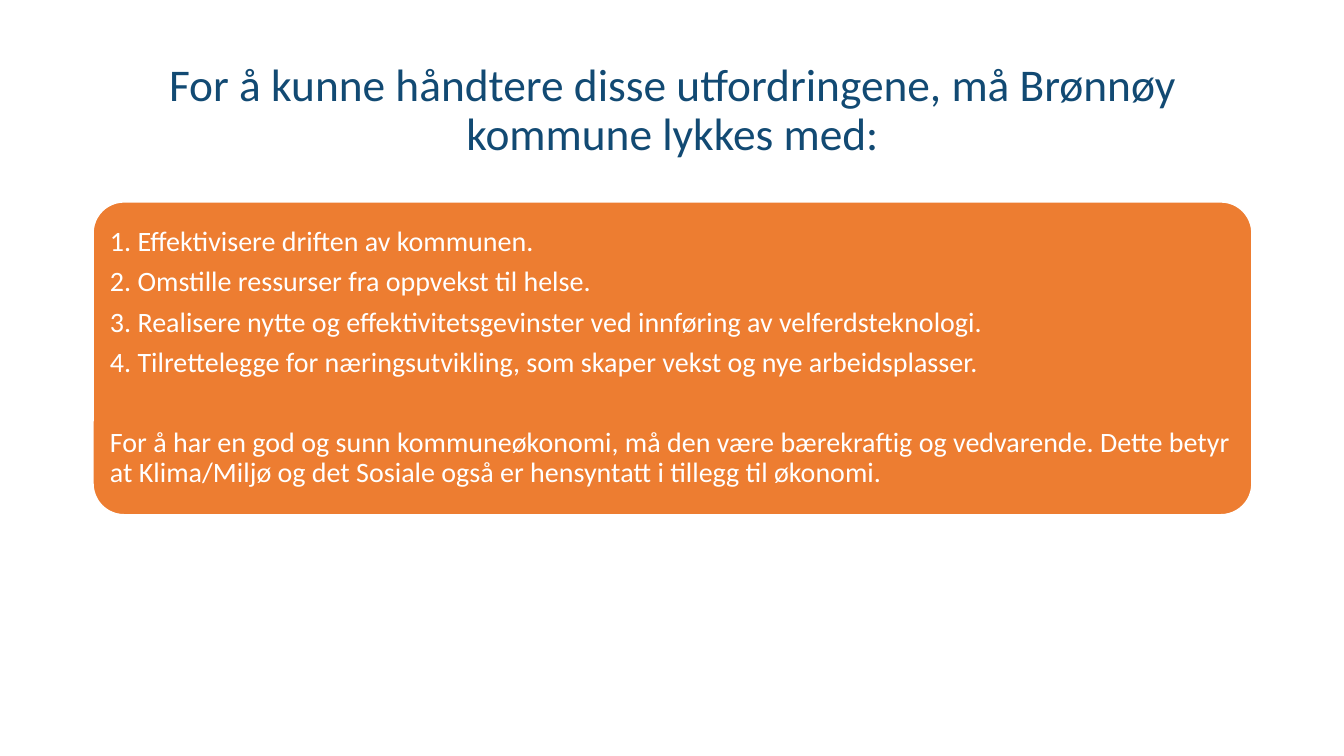
from pptx import Presentation
from pptx.dml.color import RGBColor
from pptx.enum.shapes import MSO_SHAPE
from pptx.enum.text import MSO_ANCHOR, MSO_AUTO_SIZE, PP_ALIGN
from pptx.util import Inches, Pt

ROUNDED = MSO_SHAPE.ROUNDED_RECTANGLE
MIDDLE = MSO_ANCHOR.MIDDLE
LEFT, CENTER = PP_ALIGN.LEFT, PP_ALIGN.CENTER

TITLE = "For å kunne håndtere disse utfordringene, må Brønnøy kommune lykkes med:"
GOALS = [
    "1. Effektivisere driften av kommunen.",
    "2. Omstille ressurser fra oppvekst til helse.",
    "3. Realisere nytte og effektivitetsgevinster ved innføring av velferdsteknologi.",
    "4. Tilrettelegge for næringsutvikling, som skaper vekst og nye arbeidsplasser.",
]
CONCLUSION = (
    "For å har en god og sunn kommuneøkonomi, må den være bærekraftig og vedvarende. "
    "Dette betyr at Klima/Miljø og det Sosiale også er hensyntatt i tillegg til økonomi."
)

THEME = {
    "font": "Calibri",
    "title_size": Pt(32.4),
    "body_size": Pt(20),
    "title": RGBColor(0x12, 0x4A, 0x73),
    "panel": RGBColor(0xED, 0x7D, 0x31),
    "white": RGBColor(0xFF, 0xFF, 0xFF),
}
MARGIN, CONTENT_WIDTH = Inches(0.92), Inches(11.5)
PANEL_INSET = Inches(0.08)
LINE_SPACING = 0.9
GOAL_GAP, CONCLUSION_GAP = Pt(7), Pt(29)


def format_paragraph(paragraph, text, size, color, alignment):
    paragraph.text = text
    paragraph.alignment = alignment
    paragraph.line_spacing = LINE_SPACING
    paragraph.font.name = THEME["font"]
    paragraph.font.size = size
    paragraph.font.color.rgb = color


def add_title(slide):
    title = slide.shapes.title
    title.left, title.top = MARGIN, Inches(0.58)
    title.width, title.height = CONTENT_WIDTH, Inches(1.05)
    frame = title.text_frame
    frame.word_wrap = True
    frame.auto_size = MSO_AUTO_SIZE.NONE
    frame.vertical_anchor = MIDDLE
    format_paragraph(frame.paragraphs[0], TITLE, THEME["title_size"], THEME["title"], CENTER)


def add_goal_panel(slide):
    panel = slide.shapes.add_shape(ROUNDED, MARGIN, Inches(2), CONTENT_WIDTH, Inches(3.11))
    panel.adjustments[0] = 0.1
    panel.shadow.inherit = False
    panel.fill.solid()
    panel.fill.fore_color.rgb = THEME["panel"]
    panel.line.color.rgb = THEME["white"]
    panel.line.width = Pt(1.5)

    frame = panel.text_frame
    frame.word_wrap = True
    frame.vertical_anchor = MIDDLE
    frame.margin_left = frame.margin_right = PANEL_INSET
    frame.margin_top = frame.margin_bottom = PANEL_INSET
    for index, text in enumerate([*GOALS, CONCLUSION]):
        paragraph = frame.add_paragraph() if index else frame.paragraphs[0]
        format_paragraph(paragraph, text, THEME["body_size"], THEME["white"], LEFT)
        paragraph.space_after = GOAL_GAP
    paragraph.space_before = CONCLUSION_GAP


def main():
    presentation = Presentation()
    presentation.slide_width, presentation.slide_height = Inches(13.33), Inches(7.5)
    slide = presentation.slides.add_slide(presentation.slide_layouts.get_by_name("Title Only"))
    add_title(slide)
    add_goal_panel(slide)
    presentation.save("out.pptx")


if __name__ == "__main__":
    main()
